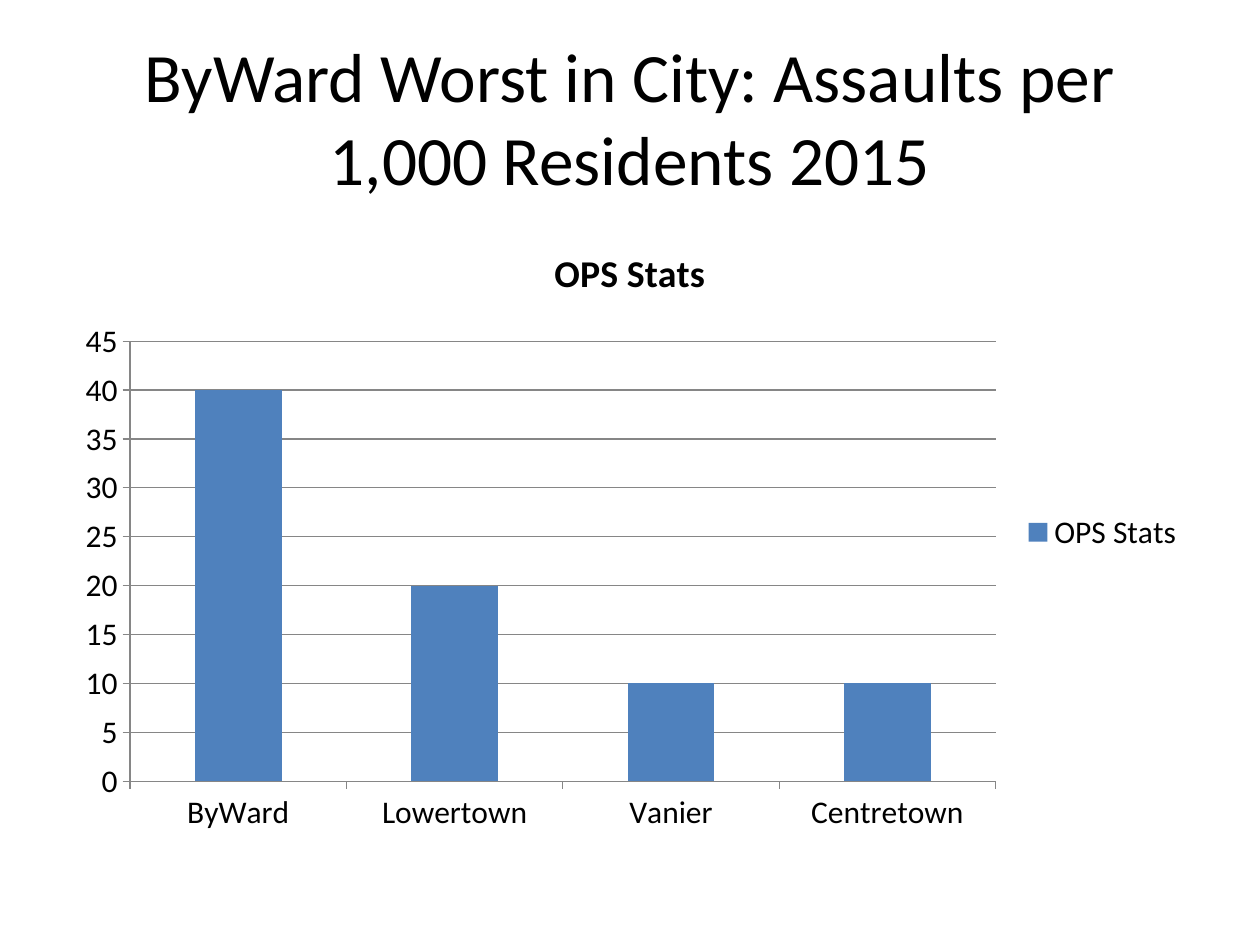
from pptx import Presentation
from pptx.chart.data import CategoryChartData
from pptx.dml.color import RGBColor
from pptx.enum.chart import XL_CHART_TYPE, XL_LEGEND_POSITION, XL_TICK_MARK
from pptx.enum.text import MSO_ANCHOR, PP_ALIGN
from pptx.util import Inches, Pt

COLUMNS = XL_CHART_TYPE.COLUMN_CLUSTERED
LEGEND_RIGHT = XL_LEGEND_POSITION.RIGHT
TICK_OUTSIDE, TICK_NONE = XL_TICK_MARK.OUTSIDE, XL_TICK_MARK.NONE
MIDDLE, CENTER = MSO_ANCHOR.MIDDLE, PP_ALIGN.CENTER

BLACK = RGBColor(0x00, 0x00, 0x00)
BLUE = RGBColor(0x4F, 0x81, 0xBD)
GRAY = RGBColor(0x86, 0x86, 0x86)
FONT = "Calibri"
TITLE_ONLY_LAYOUT = 5

MARGIN = Inches(0.5)
CONTENT_WIDTH = Inches(9)
SERIES_NAME = "OPS Stats"
ASSAULTS = {"ByWard": 40, "Lowertown": 20, "Vanier": 10, "Centretown": 10}


def set_font(font, size, bold=False):
    font.name = FONT
    font.size = Pt(size)
    font.bold = bold
    font.color.rgb = BLACK


def set_line(line):
    line.color.rgb = GRAY
    line.width = Pt(0.75)


def add_title(slide, text):
    title = slide.shapes.title
    title.left, title.top = MARGIN, Inches(0.3)
    title.width, title.height = CONTENT_WIDTH, Inches(1.25)
    frame = title.text_frame
    frame.text = text
    frame.word_wrap = True
    frame.vertical_anchor = MIDDLE
    paragraph = frame.paragraphs[0]
    paragraph.alignment = CENTER
    set_font(paragraph.font, 39.6)


def style_axis(axis):
    axis.major_tick_mark = TICK_OUTSIDE
    axis.minor_tick_mark = TICK_NONE
    set_line(axis.format.line)
    set_font(axis.tick_labels.font, 18)


def add_assaults_chart(slide):
    data = CategoryChartData()
    data.categories = ASSAULTS.keys()
    data.add_series(SERIES_NAME, ASSAULTS.values())
    chart = slide.shapes.add_chart(
        COLUMNS, MARGIN, Inches(1.75), CONTENT_WIDTH, Inches(4.95), data
    ).chart
    set_font(chart.font, 18)

    chart.has_title = True
    heading = chart.chart_title.text_frame
    heading.text = SERIES_NAME
    set_font(heading.paragraphs[0].font, 21.6, bold=True)
    chart.chart_title.include_in_layout = False

    chart.has_legend = True
    chart.legend.position = LEGEND_RIGHT
    chart.legend.include_in_layout = False
    set_font(chart.legend.font, 18)

    style_axis(chart.category_axis)
    style_axis(chart.value_axis)
    chart.value_axis.has_major_gridlines = True
    set_line(chart.value_axis.major_gridlines.format.line)

    plot = chart.plots[0]
    plot.gap_width = 150
    plot.vary_by_categories = False
    fill = plot.series[0].format.fill
    fill.solid()
    fill.fore_color.rgb = BLUE


def main():
    prs = Presentation()
    prs.slide_width, prs.slide_height = Inches(10), Inches(7.5)
    slide = prs.slides.add_slide(prs.slide_layouts[TITLE_ONLY_LAYOUT])
    add_title(slide, "ByWard Worst in City: Assaults per 1,000 Residents 2015")
    add_assaults_chart(slide)
    prs.save("out.pptx")


if __name__ == "__main__":
    main()
